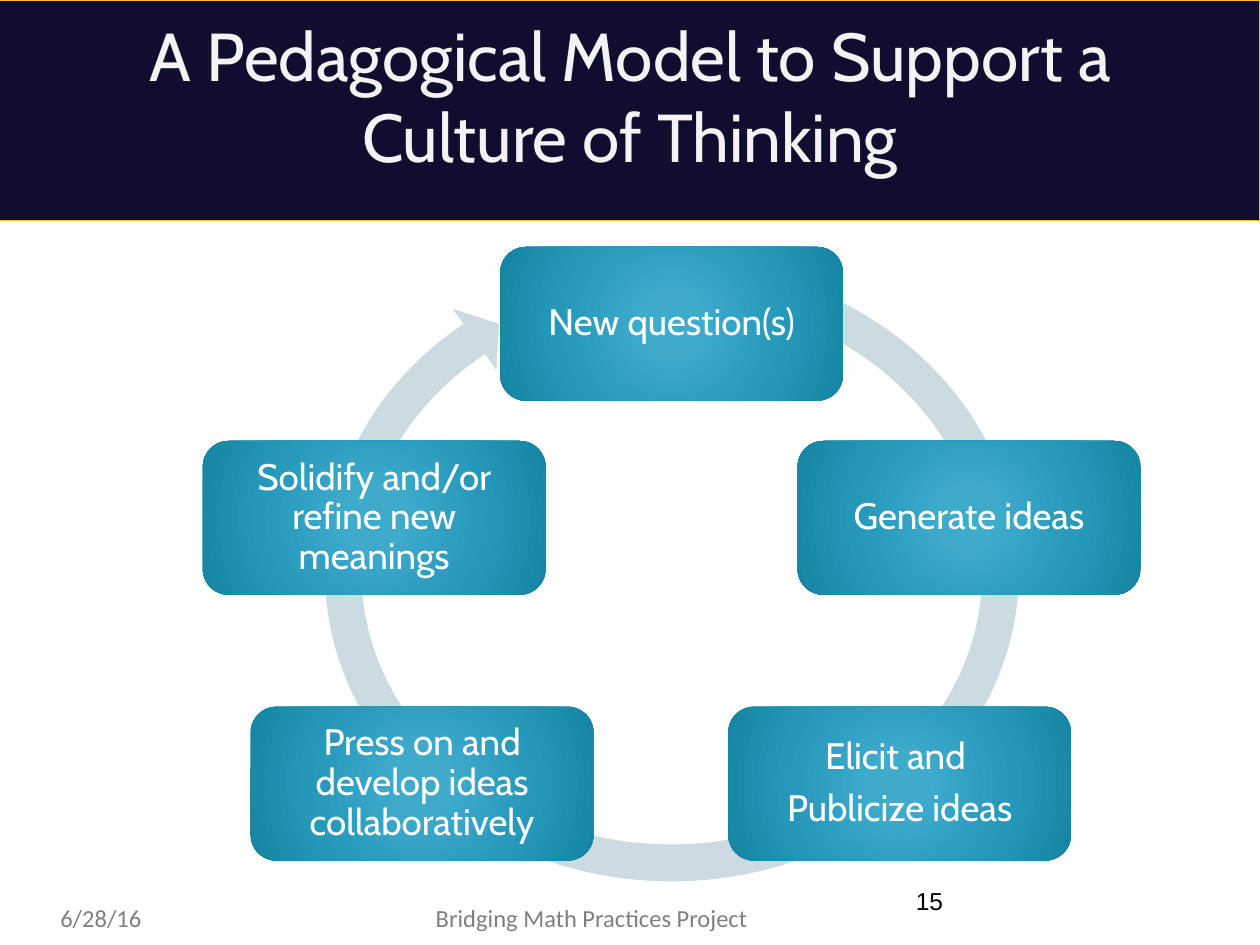
from dataclasses import dataclass

from pptx import Presentation
from pptx.dml.color import RGBColor
from pptx.enum.shapes import MSO_SHAPE as Shape
from pptx.enum.text import MSO_ANCHOR as Anchor, PP_ALIGN as Align
from pptx.oxml import parse_xml
from pptx.oxml.ns import nsdecls
from pptx.util import Inches, Pt

Point = tuple[float, float]


@dataclass
class Step:
    text: str
    left: float
    top: float


@dataclass
class Label:
    text: str
    left: float
    top: float
    width: float
    height: float
    font: str
    size: float
    color: str
    anchor: Anchor = Anchor.TOP
    align: Align = Align.LEFT
    margin_top: float = 0.05
    margin_bottom: float = 0.05


STEP_WIDTH, STEP_HEIGHT = 2.72, 1.22
STEPS = [
    Step("New question(s)", 3.97, 1.96),
    Step("Generate ideas", 6.33, 3.5),
    Step("Elicit and \nPublicize ideas", 5.78, 5.61),
    Step("Press on and develop ideas collaboratively", 1.99, 5.61),
    Step("Solidify and/or refine new meanings", 1.61, 3.5),
]
STEP_GRADIENT = [(0, "3FABCD"), (15, "3EAACC"), (62, "2597B9"),
                 (97, "1786A5"), (100, "0985A6")]

# The deep bottom margin of the title lifts its two lines within the band.
LABELS = [
    Label("6/28/16", 0.38, 7.12, 1.65, 0.34, "Calibri", 14, "7F7F7F"),
    Label("Bridging Math Practices Project", 3.36, 7.12, 2.95, 0.34,
          "Calibri", 14, "7F7F7F"),
    Label("A Pedagogical Model to Support a Culture of Thinking", 0.5, 0.49, 9, 1.25,
          "Cabin", 38.7, "F3F3F3", Anchor.MIDDLE, Align.CENTER, 0.1, 0.82),
    Label("15", 7.17, 6.95, 2.33, 0.4, "Arial", 14, "000000", Anchor.MIDDLE),
]

# Cycle arrow: outer edge clockwise, arrowhead, inner edge back.
# Each curve is two control points and an end point.
ARROW_LEFT, ARROW_TOP, ARROW_WIDTH, ARROW_HEIGHT = 2.42, 1.93, 5.82, 5.22
OUTER_START = (6.17, 2.2)
OUTER_CURVES = [
    ((7.38, 2.55), (8.17, 3.58), (8.08, 4.71)),
    ((7.99, 5.84), (7.04, 6.77), (5.79, 6.96)),
    ((4.54, 7.15), (3.3, 6.55), (2.8, 5.51)),
    ((2.3, 4.46), (2.67, 3.25), (3.68, 2.57)),
]
ARROWHEAD = [(3.59, 2.45), (3.96, 2.57), (3.94, 2.94), (3.85, 2.81)]
INNER_CURVES = [
    ((2.94, 3.41), (2.62, 4.48), (3.07, 5.4)),
    ((3.53, 6.32), (4.63, 6.84), (5.75, 6.67)),
    ((6.87, 6.5), (7.72, 5.68), (7.79, 4.68)),
    ((7.87, 3.69), (7.16, 2.77), (6.07, 2.47)),
]


def rgb(color: str) -> RGBColor:
    return RGBColor.from_string(color)


def style_text(shape, font: str, size: float, color: str, align: Align,
               anchor: Anchor, side: float, top: float, bottom: float) -> None:
    frame = shape.text_frame
    frame.word_wrap = True
    frame.vertical_anchor = anchor
    frame.margin_left = frame.margin_right = Inches(side)
    frame.margin_top = Inches(top)
    frame.margin_bottom = Inches(bottom)
    for paragraph in frame.paragraphs:
        paragraph.alignment = align
        for run in paragraph.runs:
            run.font.name = font
            run.font.size = Pt(size)
            run.font.color.rgb = rgb(color)


def add_label(slide, label: Label) -> None:
    box = slide.shapes.add_textbox(Inches(label.left), Inches(label.top),
                                   Inches(label.width), Inches(label.height))
    box.text_frame.text = label.text
    style_text(box, label.font, label.size, label.color, label.align,
               label.anchor, 0.1, label.margin_top, label.margin_bottom)


def add_band(slide) -> None:
    band = slide.shapes.add_shape(Shape.RECTANGLE, Inches(-0.04), 0,
                                  Inches(10.04), Inches(1.75))
    band.shadow.inherit = False
    band.fill.solid()
    band.fill.fore_color.rgb = rgb("100E2F")
    band.line.color.rgb = rgb("FABD17")
    band.line.width = Pt(0.75)


def path_command(name: str, *points: Point):
    """Make one outline command, measured from the arrow's top left corner."""
    point_xml = "".join(
        f'<a:pt x="{Inches(x - ARROW_LEFT)}" y="{Inches(y - ARROW_TOP)}"/>'
        for x, y in points)
    return parse_xml(f'<a:{name} {nsdecls("a")}>{point_xml}</a:{name}>')


def add_cycle_arrow(slide) -> None:
    # The frame fixes position and size; curves then replace its outline.
    right, bottom = ARROW_LEFT + ARROW_WIDTH, ARROW_TOP + ARROW_HEIGHT
    builder = slide.shapes.build_freeform(Inches(ARROW_LEFT), Inches(ARROW_TOP))
    builder.add_line_segments([(Inches(right), Inches(ARROW_TOP)),
                               (Inches(right), Inches(bottom))])
    arrow = builder.convert_to_shape()
    outline = arrow.element.spPr.find(".//{*}pathLst")[0]
    for command in list(outline):
        outline.remove(command)
    outline.append(path_command("moveTo", OUTER_START))
    outline.extend([path_command("cubicBezTo", *curve) for curve in OUTER_CURVES])
    outline.extend([path_command("lnTo", point) for point in ARROWHEAD])
    outline.extend([path_command("cubicBezTo", *curve) for curve in INNER_CURVES])
    outline.append(path_command("close"))
    arrow.shadow.inherit = False
    arrow.fill.solid()
    arrow.fill.fore_color.rgb = rgb("CCDBE1")
    arrow.line.fill.background()


def fill_radial(shape, stops: list[tuple[int, str]]) -> None:
    """Fill a shape with a gradient that spreads from its centre."""
    stop_xml = "".join(
        f'<a:gs pos="{position * 1000}"><a:srgbClr val="{color}"/></a:gs>'
        for position, color in stops)
    gradient = parse_xml(
        f'<a:gradFill {nsdecls("a")} rotWithShape="1"><a:gsLst>{stop_xml}</a:gsLst>'
        '<a:path path="circle"><a:fillToRect l="50000" t="50000" r="50000" b="50000"/>'
        '</a:path></a:gradFill>')
    shape.element.spPr.prstGeom.addnext(gradient)


def add_step(slide, step: Step) -> None:
    box = slide.shapes.add_shape(Shape.ROUNDED_RECTANGLE, Inches(step.left),
                                 Inches(step.top), Inches(STEP_WIDTH),
                                 Inches(STEP_HEIGHT))
    box.shadow.inherit = False
    box.line.fill.background()
    fill_radial(box, STEP_GRADIENT)
    box.text_frame.text = step.text
    style_text(box, "Cabin", 21, "FFFFFF", Align.CENTER, Anchor.MIDDLE,
               0.09, 0.09, 0.09)
    for index, paragraph in enumerate(box.text_frame.paragraphs):
        paragraph.line_spacing = 0.9
        paragraph.space_before = Pt(7.3 if index else 0)


def main() -> None:
    presentation = Presentation()
    presentation.slide_width = Inches(10)
    presentation.slide_height = Inches(7.5)
    slide = presentation.slides.add_slide(presentation.slide_layouts[6])

    # Title band, title and footer
    add_band(slide)
    for label in LABELS:
        add_label(slide, label)

    # Cycle of steps
    add_cycle_arrow(slide)
    for step in STEPS:
        add_step(slide, step)

    presentation.save("out.pptx")


if __name__ == "__main__":
    main()
